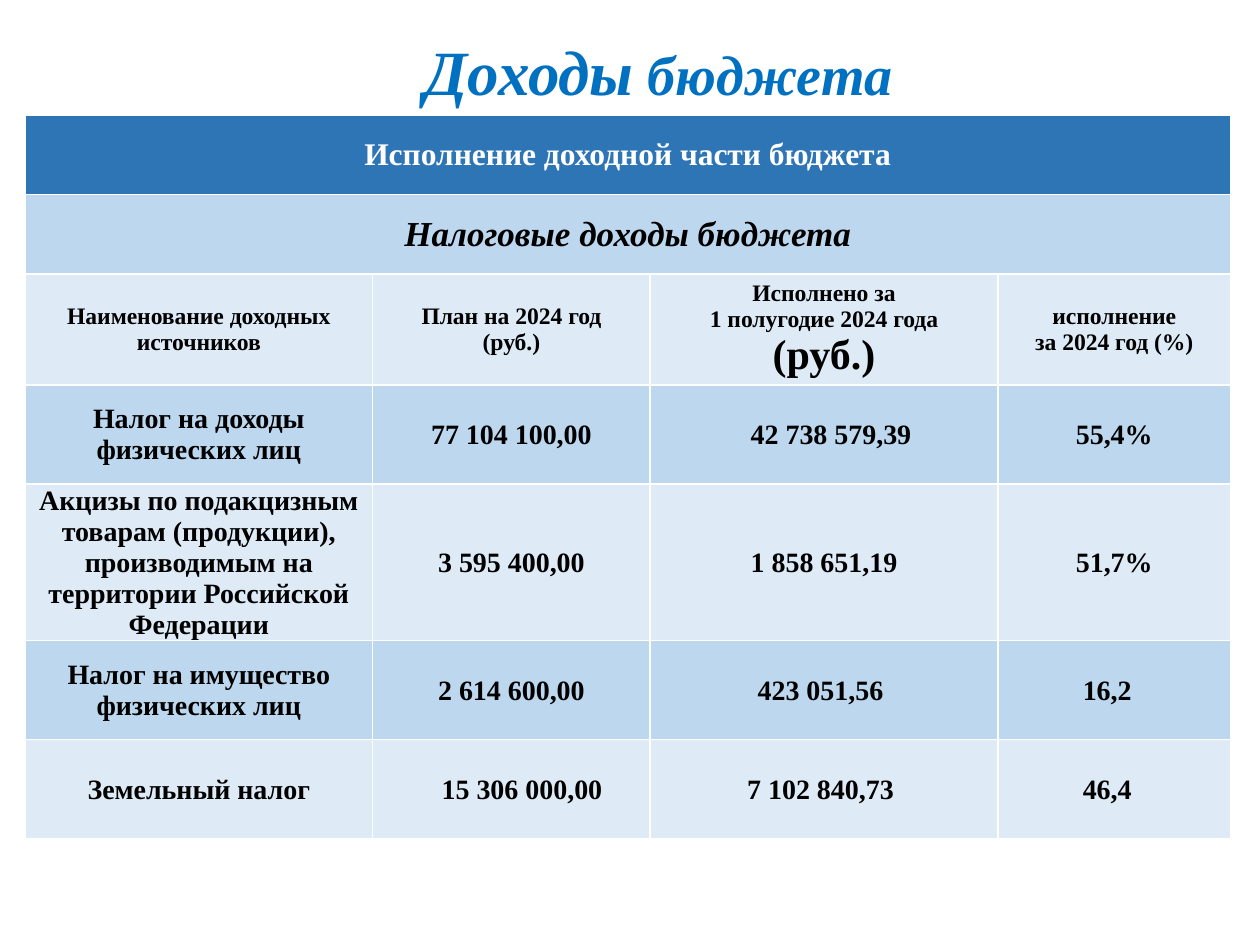
from pptx import Presentation
from pptx.dml.color import RGBColor
from pptx.enum.text import MSO_ANCHOR, PP_ALIGN
from pptx.util import Pt

FONT = "Times New Roman"
COLORS = {
    "title": "0070C0",
    "header": "2E75B6",
    "band_dark": "BDD7EE",
    "band_light": "DEEBF7",
    "white": "FFFFFF",
    "black": "000000",
}
COLUMN_WIDTHS = [198.75, 158.5, 198.75, 133]
ROW_HEIGHTS = [45.25, 45.25, 62.75, 56.5, 56.5, 56.5, 56.5]
ROW_SIZES = [18, 20, 13.5, 16, 16, 16, 16]
FIRST_DATA_ROW = 3

# A new line starts a paragraph, \v breaks a line inside one.
ROWS = [
    ["Исполнение доходной части бюджета"],
    ["Налоговые доходы бюджета"],
    ["Наименование доходных источников", "План на 2024 год\n(руб.)",
     "Исполнено за\v1 полугодие 2024 года\n(руб.)", "исполнение\vза 2024 год (%)"],
    ["Налог на доходы физических лиц", "77 104 100,00", "42 738 579,39", "55,4%"],
    ["Акцизы по подакцизным товарам (продукции), производимым на территории "
     "Российской Федерации", "3 595 400,00", "1 858 651,19", "51,7%"],
    ["Налог на имущество физических лиц", "2 614 600,00", "423 051,56", "16,2"],
    ["Земельный налог", "15 306 000,00", "7 102 840,73", "46,4"],
]
# Extra left and right margins that move single figures off centre.
EXTRA_MARGINS = {
    (3, 2): (8, 0),
    (5, 2): (0, 4),
    (5, 3): (0, 8),
    (6, 1): (12, 0),
    (6, 2): (0, 4),
    (6, 3): (0, 8),
}


def color(name):
    return RGBColor.from_string(COLORS[name])


presentation = Presentation()
presentation.slide_width = Pt(720)
presentation.slide_height = Pt(540)
slide = presentation.slides.add_slide(presentation.slide_layouts[5])

title = slide.shapes.title
title.left, title.top, title.width, title.height = Pt(70.5), Pt(15), Pt(612), Pt(51)
title.text_frame.vertical_anchor = MSO_ANCHOR.TOP
paragraph = title.text_frame.paragraphs[0]
paragraph.alignment = PP_ALIGN.CENTER
paragraph.font.name = FONT
paragraph.font.bold = paragraph.font.italic = True
paragraph.font.color.rgb = color("title")
for text, size in [("Доходы", 36), (" бюджета", 32)]:
    run = paragraph.add_run()
    run.text = text
    run.font.size = Pt(size)

table = slide.shapes.add_table(
    len(ROWS), len(COLUMN_WIDTHS), Pt(14.25), Pt(66),
    Pt(sum(COLUMN_WIDTHS)), Pt(sum(ROW_HEIGHTS))).table
table.horz_banding = False
for column, width in zip(table.columns, COLUMN_WIDTHS):
    column.width = Pt(width)
for row, height in zip(table.rows, ROW_HEIGHTS):
    row.height = Pt(height)

for row_index, texts in enumerate(ROWS):
    if row_index == 0:
        fill_name = "header"
    else:
        fill_name = "band_dark" if row_index % 2 else "band_light"
    if len(texts) == 1:
        table.cell(row_index, 0).merge(table.cell(row_index, len(COLUMN_WIDTHS) - 1))
    for column_index, text in enumerate(texts):
        cell = table.cell(row_index, column_index)
        cell.fill.solid()
        cell.fill.fore_color.rgb = color(fill_name)
        cell.vertical_anchor = MSO_ANCHOR.MIDDLE
        if row_index >= FIRST_DATA_ROW and (row_index, column_index) != (FIRST_DATA_ROW, 0):
            left, right = EXTRA_MARGINS.get((row_index, column_index), (0, 0))
            cell.margin_left = Pt(0.75 + left)
            cell.margin_right = Pt(0.75 + right)
            cell.margin_top = Pt(0.75)
            cell.margin_bottom = 0
        cell.text = text
        for paragraph in cell.text_frame.paragraphs:
            paragraph.alignment = PP_ALIGN.CENTER
            paragraph.font.name = FONT
            paragraph.font.size = Pt(ROW_SIZES[row_index])
            paragraph.font.bold = True
            paragraph.font.italic = row_index == 1
            paragraph.font.color.rgb = color("white" if row_index == 0 else "black")

table.cell(2, 2).text_frame.paragraphs[1].font.size = Pt(24)

presentation.save("out.pptx")
